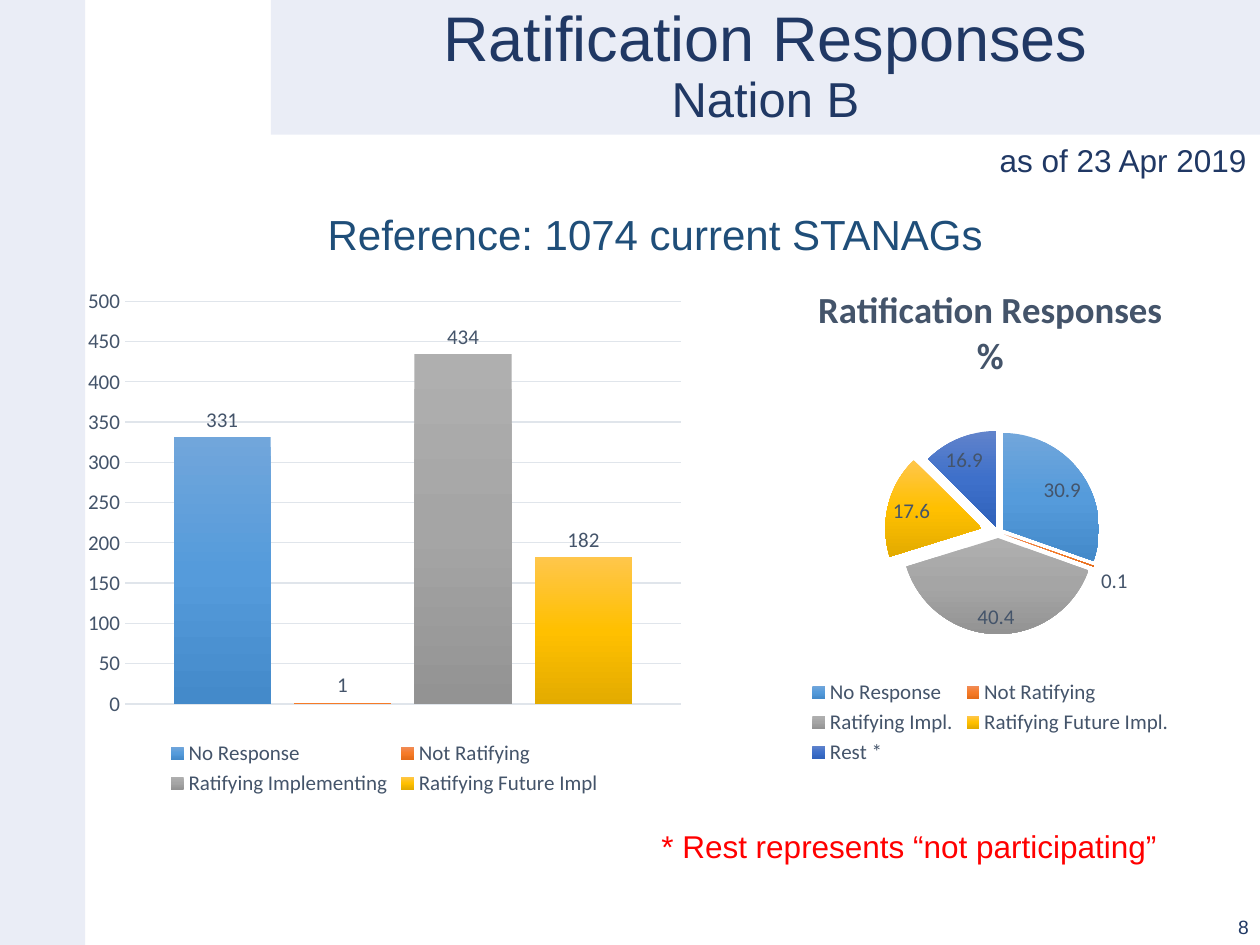
from lxml import etree
from pptx import Presentation
from pptx import util as u
from pptx.chart.data import CategoryChartData
from pptx.dml.color import RGBColor
from pptx.enum import chart as ch, shapes, text
from pptx.oxml import parse_xml
from pptx.oxml import ns

COLS, ROWS = 100, 75
NAVY, BLUE, SLATE, RED = "203864", "1F4E79", "44546A", "FF0000"
PALE, GRID = "EAEDF6", "E0E5EB"
GRADIENTS = [("71A6DB", "559BDB", "448ACA"), ("F18C57", "F67B28", "E56C19"),
             ("AFAFAF", "A5A5A5", "939393"), ("FFC64B", "FFC000", "E3AB00"),
             ("6183CB", "3E70CA", "3062BB")]
COUNTS = {"No Response": 331, "Not Ratifying": 1,
          "Ratifying Implementing": 434, "Ratifying Future Impl": 182}
SHARES = {"No Response": 30.9, "Not Ratifying": 0.1, "Ratifying Impl.": 40.4,
          "Ratifying Future Impl.": 17.6, "Rest *": 12.7}
EXPLOSION = [6, 6, 6, 18, 6]
LABEL = {"size": u.Pt(12), "name": "Calibri", "bold": False}


def rgb(value):
    """Return the colour of a hex string."""
    return RGBColor.from_string(value)


def cells(prs, box):
    """Turn a box of grid columns and rows into slide lengths."""
    w, h = prs.slide_width / COLS, prs.slide_height / ROWS
    return [round(n * side) for n, side in zip(box, (w, h, w, h))]


def set_font(font, color, values):
    """Apply a colour and a dict of values to a font."""
    for name, value in values.items():
        setattr(font, name, value)
    font.color.rgb = rgb(color)


def panel(prs, s, box):
    """Draw a plain pale rectangle."""
    sp = s.shapes.add_shape(shapes.MSO_SHAPE.RECTANGLE, *cells(prs, box))
    sp.shadow.inherit = False
    sp.fill.solid()
    sp.fill.fore_color.rgb = rgb(PALE)
    sp.line.fill.background()


def label(prs, s, box, lines, color, align="LEFT", anchor="TOP", wrap=True):
    """Place one paragraph of sized lines in a text box."""
    tf = s.shapes.add_textbox(*cells(prs, box)).text_frame
    values = {"word_wrap": wrap, "vertical_anchor": getattr(text.MSO_ANCHOR, anchor)}
    for name, value in values.items():
        setattr(tf, name, value)
    p = tf.paragraphs[0]
    p.alignment = getattr(text.PP_ALIGN, align)
    for i, (words, size) in enumerate(lines):
        if i:
            p.add_line_break()
        r = p.add_run()
        r.text = words
        set_font(r.font, color, {"size": u.Pt(size), "name": "Arial"})
    return p


def gradient(fmt, colors):
    """Fill a series or point with a three-stop vertical gradient."""
    stops = "".join(f'<a:gs pos="{i * 50000}"><a:srgbClr val="{c}"/></a:gs>'
                    for i, c in enumerate(colors))
    spPr = fmt._element.get_or_add_spPr()
    spPr.append(parse_xml(f'<a:gradFill {ns.nsdecls("a")} rotWithShape="1"><a:gsLst>{stops}'
                          '</a:gsLst><a:lin ang="5400000" scaled="0"/></a:gradFill>'))
    return spPr


def plot_layout(chart, box):
    """Fix the inner plot area as shares of the chart."""
    area = chart._chartSpace.chart.plotArea
    for old in area.findall(ns.qn("c:layout")):
        area.remove(old)
    layout = parse_xml(f'<c:layout {ns.nsdecls("c")}><c:manualLayout/></c:layout>')
    values = [("layoutTarget", "inner"), ("xMode", "edge"), ("yMode", "edge"),
              *zip("xywh", box)]
    for tag, value in values:
        etree.SubElement(layout[0], ns.qn(f"c:{tag}"), val=str(value))
    area.insert(0, layout)


def add_chart(prs, s, box, kind, cats, series, inner, position):
    """Add a chart with a bottom legend and value labels."""
    data = CategoryChartData()
    data.categories = cats
    for name, values in series:
        data.add_series(name, values)
    chart = s.shapes.add_chart(kind, *cells(prs, box), data).chart
    set_font(chart.font, SLATE, LABEL)
    chart.has_legend = True
    chart.legend.position = ch.XL_LEGEND_POSITION.BOTTOM
    chart.legend.include_in_layout = False
    set_font(chart.legend.font, SLATE, LABEL)
    values = {"show_value": True, "show_percentage": False, "position": position}
    for ser in chart.plots[0].series:
        for name, value in values.items():
            setattr(ser.data_labels, name, value)
        set_font(ser.data_labels.font, SLATE, LABEL)
    plot_layout(chart, inner)
    return chart


def count_chart(prs, s, box):
    """Draw the columns of response counts."""
    chart = add_chart(prs, s, box, ch.XL_CHART_TYPE.COLUMN_CLUSTERED, ["1"],
                      [(name, [n]) for name, n in COUNTS.items()],
                      (0.08, 0.045, 0.9, 0.77), ch.XL_LABEL_POSITION.OUTSIDE_END)
    chart.has_title = False
    plot = chart.plots[0]
    for name, value in {"gap_width": 100, "overlap": -24, "vary_by_categories": False}.items():
        setattr(plot, name, value)
    for ser, colors in zip(plot.series, GRADIENTS):
        gradient(ser.format, colors)
    chart.category_axis.visible = False
    axis = chart.value_axis
    values = {"minimum_scale": 0, "maximum_scale": 500, "major_unit": 50,
              "major_tick_mark": ch.XL_TICK_MARK.NONE, "has_major_gridlines": True}
    for name, value in values.items():
        setattr(axis, name, value)
    axis.format.line.fill.background()
    line = axis.major_gridlines.format.line
    line.color.rgb = rgb(GRID)
    line.width = u.Pt(0.75)
    set_font(axis.tick_labels.font, SLATE, LABEL)


def share_chart(prs, s, box):
    """Draw the exploded pie of response percentages."""
    best = ch.XL_LABEL_POSITION.BEST_FIT
    chart = add_chart(prs, s, box, ch.XL_CHART_TYPE.PIE, list(SHARES),
                      [("Series 1", list(SHARES.values()))], (0.33, 0.34, 0.37, 0.38), best)
    chart.has_title = True
    tf = chart.chart_title.text_frame
    tf.text = "Ratification Responses\n%"
    for p in tf.paragraphs:
        set_font(p.runs[0].font, SLATE, {**LABEL, "size": u.Pt(21), "bold": True})
    plot = chart.plots[0]
    plot.vary_by_categories = True
    points = plot.series[0].points
    for i, (colors, share) in enumerate(zip(GRADIENTS, EXPLOSION)):
        spPr = gradient(points[i].format, colors)
        spPr.addprevious(parse_xml(f'<c:explosion {ns.nsdecls("c")} val="{share}"/>'))
    rest = points[len(SHARES) - 1].data_label
    rest.text_frame.text = "16.9"
    set_font(rest.text_frame.paragraphs[0].runs[0].font, SLATE, LABEL)
    rest.position = best


def header(prs, s, box):
    """Draw the title band with its two centred lines."""
    panel(prs, s, box)
    lines = [("Ratification Responses", 36), ("Nation B", 28)]
    label(prs, s, box, lines, NAVY, "CENTER", "MIDDLE").line_spacing = 0.9


def main():
    """Build the slide and save it."""
    prs = Presentation()
    prs.slide_width, prs.slide_height = u.Inches(10), u.Inches(7.5)
    s = prs.slides.add_slide(prs.slide_layouts[6])
    panel(prs, s, (0, 0, 6.75, ROWS))
    header(prs, s, (21.5, 0, 78.5, 10.7))
    label(prs, s, (20.1, 16.05, 63.8, 5), [("Reference: 1074 current STANAGs", 24)], BLUE, "CENTER")
    label(prs, s, (51.5, 65.15, 45.2, 4), [("* Rest represents “not participating”", 18)], RED)
    label(prs, s, (78.35, 10.7, 21.8, 4), [("as of 23 Apr 2019", 18)], NAVY, wrap=False)
    count_chart(prs, s, (6, 22.05, 49, 41.5))
    share_chart(prs, s, (57.6, 21, 42, 40.1))
    label(prs, s, (77.6, 71, 22.5, 4), [("8", 11)], NAVY, "RIGHT", "BOTTOM")
    prs.save("out.pptx")


if __name__ == "__main__":
    main()
